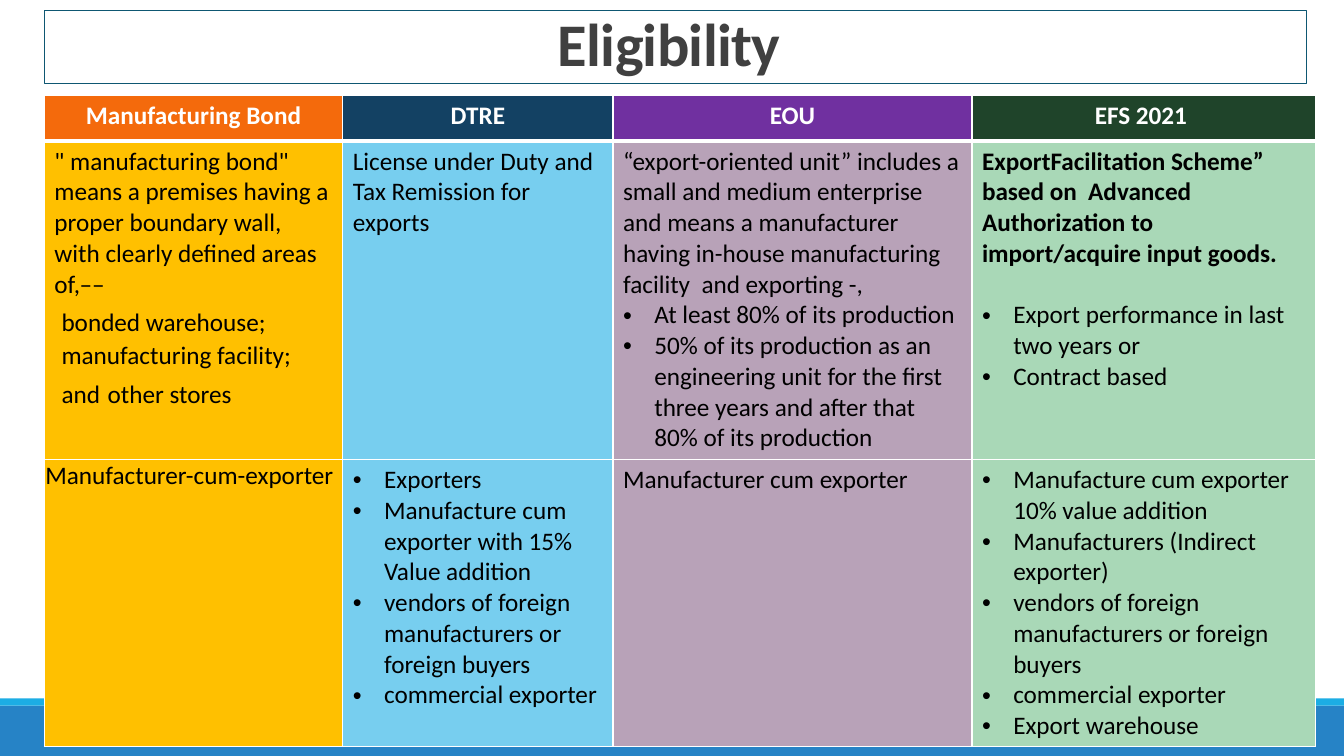
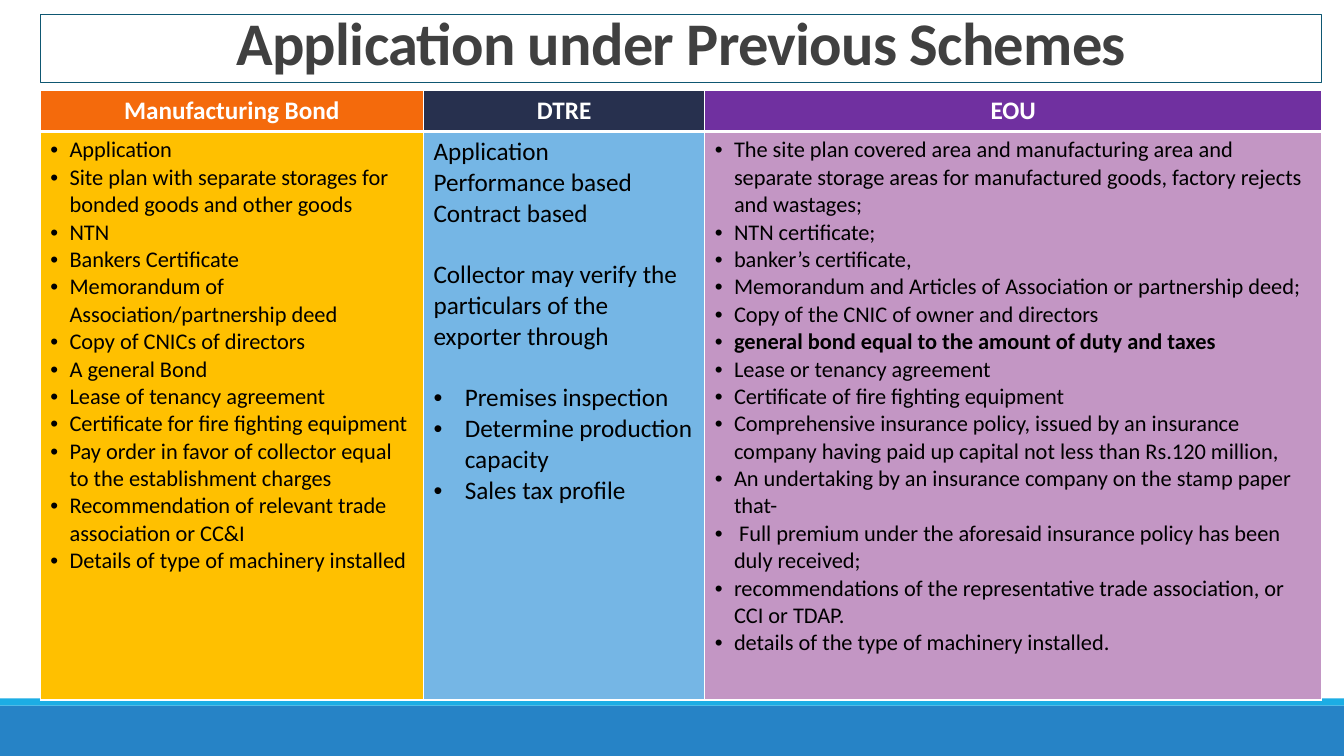
from dataclasses import dataclass
from lxml.etree import SubElement
from pptx import Presentation
from pptx.dml.color import RGBColor
from pptx.enum.shapes import MSO_SHAPE
from pptx.enum.text import MSO_ANCHOR, MSO_AUTO_SIZE, PP_ALIGN
from pptx.oxml import parse_xml
from pptx.oxml.ns import nsdecls, qn
from pptx.util import Inches, Pt


@dataclass(frozen=True)
class Theme:
    font: str = "Calibri"
    title: float = 43.2
    large: int = 24
    text: int = 18
    small: int = 16
    gap: int = 22
    thin: int = 1
    thick: int = 3
    white: str = "FFFFFF"
    black: str = "000000"
    grey: str = "404040"
    frame: str = "0E5772"
    blue: str = "2683C6"
    cyan: str = "1CADE4"
    orange: str = "F46A0C"
    amber: str = "FFC000"
    ocean: str = "134163"
    navy: str = "27304E"
    sky: str = "77CEEF"
    azure: str = "75B6E5"
    purple: str = "7030A0"
    mauve: str = "B8A2B8"
    lilac: str = "C396C4"
    forest: str = "1F442A"
    mint: str = "A9D8B7"


T = Theme()


@dataclass
class Column:
    width: float
    head: str
    dark: str
    light: str
    cells: list


def paint(fill, tint):
    fill.solid()
    fill.fore_color.rgb = RGBColor.from_string(tint)


def write(para, text, size=T.text, color=T.black, bold=False, align=None,
          before=0, line=None, track=0, hang=0, left=0):
    if align is not None:
        para.alignment = align
    if line:
        para.line_spacing = line
    para.space_before = Pt(before)
    props = para._p.get_or_add_pPr()
    props.set("marL", str(Inches(hang or left)))
    props.set("indent", str(Inches(-hang)))
    if hang:
        SubElement(props, qn("a:buFont")).set("typeface", "Arial")
        SubElement(props, qn("a:buChar")).set("char", "•")
    parts = [(text, size)] if isinstance(text, str) else text
    for words, points in parts:
        run = para.add_run()
        run.text = words
        run.font.name = T.font
        run.font.size = Pt(points)
        run.font.bold = bold
        run.font.color.rgb = RGBColor.from_string(color)
        if track:
            run._r.get_or_add_rPr().set("spc", str(int(track * 100)))


def bullet(text, **style):
    return text, dict(hang=0.31) | style


def point(text, **style):
    return bullet(text, hang=0.19, size=T.small, **style)


def plain(text, **style):
    return text, style


def fill_cell(cell, paras, tint, top, bottom):
    frame = cell.text_frame
    for i, (text, style) in enumerate(paras):
        para = frame.add_paragraph() if i else frame.paragraphs[0]
        write(para, text, **style)
    paint(cell.fill, tint)
    props = cell._tc.get_or_add_tcPr()
    edges = dict(L=T.thin, R=T.thin, T=top, B=bottom)
    for i, (side, width) in enumerate(edges.items()):
        props.insert(i, parse_xml(
            f'<a:ln{side} {nsdecls("a")} w="{Pt(width)}"><a:solidFill>'
            f'<a:srgbClr val="{T.white}"/></a:solidFill></a:ln{side}>'))


def add_grid(slide, box, rows, columns):
    shape = slide.shapes.add_table(len(rows), len(columns), *map(Inches, box))
    table = shape.table
    table.horz_banding = False
    for row, height in zip(table.rows, rows):
        row.height = Inches(height)
    for c, col in enumerate(columns):
        table.columns[c].width = Inches(col.width)
        head = plain(col.head, color=T.white, bold=True, align=PP_ALIGN.CENTER)
        fill_cell(table.cell(0, c), [head], col.dark, T.thin, T.thick)
        for r, paras in enumerate(col.cells, 1):
            top = T.thick if r == 1 else T.thin
            fill_cell(table.cell(r, c), paras, col.light, top, T.thin)
    return table


def add_title(slide, box, text):
    title = slide.shapes.title
    title.left, title.top, title.width, title.height = map(Inches, box)
    title.line.color.rgb = RGBColor.from_string(T.frame)
    title.line.width = Pt(0.75)
    frame = title.text_frame
    frame.auto_size = MSO_AUTO_SIZE.NONE
    frame.vertical_anchor = MSO_ANCHOR.BOTTOM
    write(frame.paragraphs[0], text, size=T.title, color=T.grey, bold=True,
          align=PP_ALIGN.CENTER, line=0.85, track=-0.5)


def add_bands(deck, slide):
    tree = deck.slide_master.shapes.element
    for i, (top, height, tint) in enumerate([(7, 0.5, T.blue), (6.93, 0.07, T.cyan)]):
        band = slide.shapes.add_shape(MSO_SHAPE.RECTANGLE, 0, Inches(top),
                                      deck.slide_width, Inches(height))
        band.shadow.inherit = False
        paint(band.fill, tint)
        band.line.fill.background()
        tree.insert(2 + i, band.element)


def build_rules(slide):
    add_title(slide, (0.44, 0.1, 12.52, 0.73), "Eligibility ")
    bond = Column(2.96, "Manufacturing Bond", T.orange, T.amber, [
        [plain('" manufacturing bond" means a premises having a proper boundary wall, '
               "with clearly defined areas of,––"),
         plain([("bonded warehouse;", T.text), (" ", T.large),
                ("manufacturing facility; and", T.text), (" ", T.large),
                ("other stores", T.text)], left=0.07)],
        [plain("Manufacturer-cum-exporter", align=PP_ALIGN.JUSTIFY)]])
    duty = Column(2.68, "DTRE", T.ocean, T.sky, [
        [plain("License under Duty and Tax Remission for exports")],
        [bullet(text) for text in (
            "Exporters",
            "Manufacture cum exporter with 15% Value addition",
            "vendors of foreign manufacturers or foreign buyers",
            "commercial exporter")]])
    unit = Column(3.56, "EOU", T.purple, T.mauve, [
        [plain("“export-oriented unit” includes a small and medium enterprise and means "
               "a manufacturer having in-house manufacturing facility  and exporting -,"),
         bullet("At least 80% of its production"),
         bullet("50% of its production as an engineering unit for the first three years "
                "and after that 80% of its production")],
        [plain("Manufacturer cum exporter")]])
    scheme = Column(3.41, "EFS 2021 ", T.forest, T.mint, [
        [plain("ExportFacilitation Scheme” based on  Advanced Authorization to "
               "import/acquire input goods.", bold=True),
         bullet("Export performance in last two years or", before=T.gap),
         bullet("Contract based")],
        [bullet(text) for text in (
            "Manufacture cum exporter 10% value addition",
            "Manufacturers (Indirect exporter)",
            "vendors of foreign manufacturers or foreign buyers",
            "commercial exporter",
            "Export warehouse")]])
    table = add_grid(slide, (0.44, 0.95, 12.61, 6.45), (0.45, 3.16, 2.84),
                     [bond, duty, unit, scheme])
    cell = table.cell(2, 0)
    cell.margin_left = cell.margin_top = cell.margin_right = Inches(0.01)
    cell.margin_bottom = 0


def build_forms(slide):
    add_title(slide, (0.4, 0.14, 12.71, 0.68), "Application under Previous Schemes")
    bond = Column(3.8, "Manufacturing Bond", T.orange, T.amber, [
        [point(text) for text in (
            "Application",
            "Site plan with separate storages for bonded goods and other goods",
            "NTN",
            "Bankers Certificate",
            "Memorandum of Association/partnership deed",
            "Copy of CNICs of directors",
            "A general Bond",
            "Lease of tenancy agreement",
            "Certificate for fire fighting equipment",
            "Pay order in favor of collector equal to the establishment charges",
            "Recommendation of relevant trade association or CC&I",
            "Details of type of machinery installed")]])
    duty = Column(2.79, "DTRE", T.navy, T.azure, [
        [plain("Application"),
         plain("Performance based"),
         plain("Contract based"),
         plain("Collector may verify the particulars of the exporter through",
               before=T.gap),
         bullet("Premises inspection", before=T.gap),
         bullet("Determine production capacity"),
         bullet("Sales tax profile")]])
    unit = Column(6.12, "EOU", T.purple, T.lilac, [
        [point("The site plan covered area and manufacturing area and separate storage "
               "areas for manufactured goods, factory rejects and wastages;"),
         point("NTN certificate;"),
         point("banker’s certificate,"),
         point("Memorandum and Articles of Association or partnership deed;"),
         point("Copy of the CNIC of owner and directors"),
         point("general bond equal to the amount of duty and taxes", bold=True),
         point("Lease or tenancy agreement"),
         point("Certificate of fire fighting equipment"),
         point("Comprehensive insurance policy, issued by an insurance company having "
               "paid up capital not less than Rs.120 million,"),
         point("An undertaking by an insurance company on the stamp paper that-"),
         point(" Full premium under the aforesaid insurance policy has been duly received;"),
         point("recommendations of the representative trade association, or CCI or TDAP."),
         point("details of the type of machinery installed.")]])
    add_grid(slide, (0.4, 0.9, 12.71, 6.04), (0.4, 5.64), [bond, duty, unit])


def main():
    deck = Presentation()
    deck.slide_width, deck.slide_height = Inches(13.33), Inches(7.5)
    layout = deck.slide_layouts.get_by_name("Title Only")
    for i, build in enumerate((build_rules, build_forms)):
        slide = deck.slides.add_slide(layout)
        if i == 0:
            add_bands(deck, slide)
        build(slide)
    deck.save("out.pptx")


if __name__ == "__main__":
    main()
